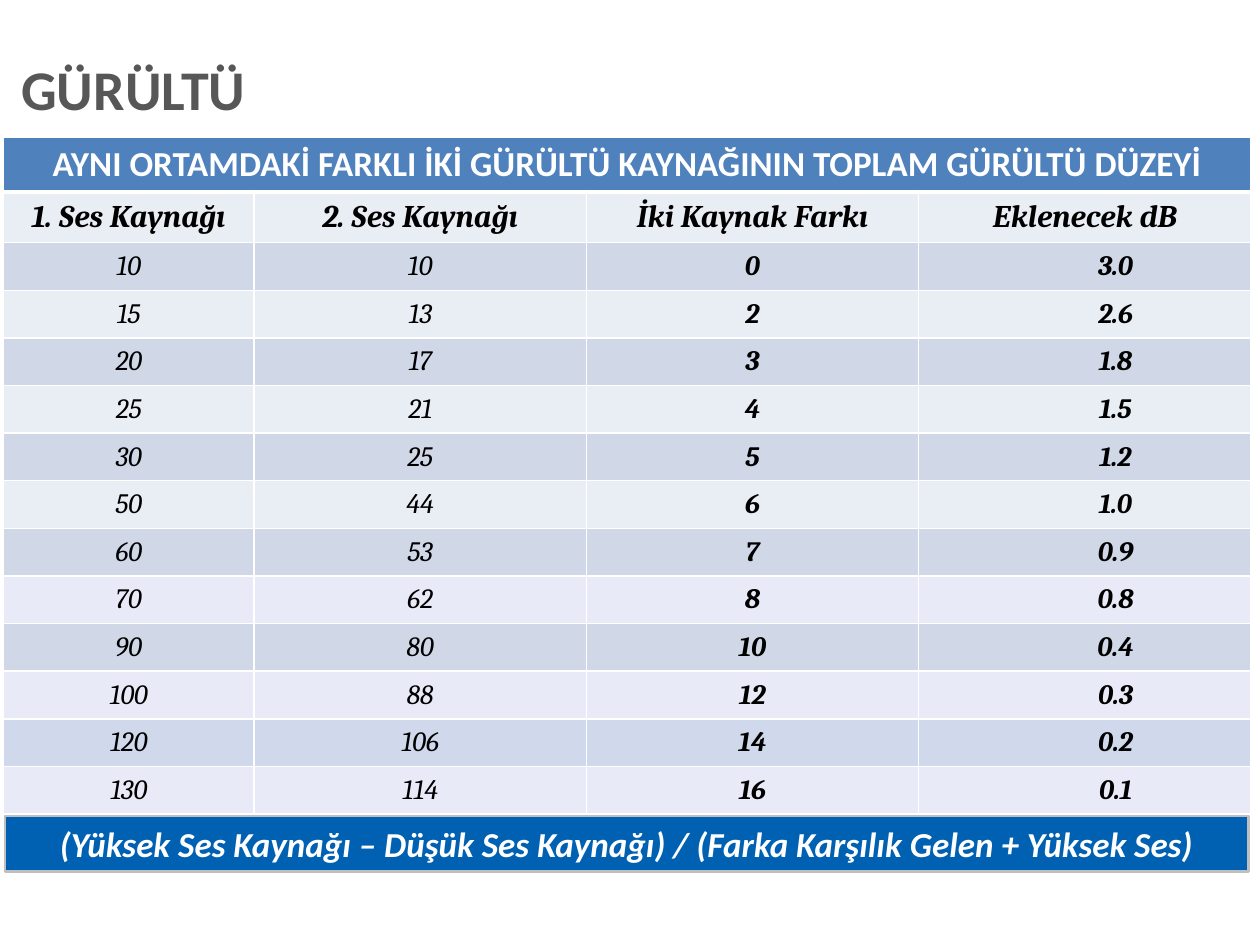
from lxml import etree
from pptx import Presentation
from pptx.dml.color import RGBColor
from pptx.enum.shapes import MSO_SHAPE
from pptx.enum.text import MSO_ANCHOR, PP_ALIGN
from pptx.oxml.ns import qn
from pptx.util import Cm, Pt

RECTANGLE = MSO_SHAPE.RECTANGLE
MIDDLE = MSO_ANCHOR.MIDDLE
LEFT, CENTER = PP_ALIGN.LEFT, PP_ALIGN.CENTER

COLORS = {
    "grey": "575757",
    "white": "FFFFFF",
    "black": "000000",
    "heading": "4F81BD",
    "dark_band": "D0D8E8",
    "blue_band": "D0D8EC",
    "light_band": "E9EDF4",
    "lilac_band": "E9EAF7",
    "formula": "0061B2",
    "formula_line": "BFBFBF",
}

HEADING = "AYNI ORTAMDAKİ FARKLI İKİ GÜRÜLTÜ KAYNAĞININ TOPLAM GÜRÜLTÜ DÜZEYİ"
COLUMN_NAMES = ["1. Ses Kaynağı", "2. Ses Kaynağı", "İki Kaynak Farkı", "Eklenecek dB"]
NOISE_LEVELS = [
    (10, 10, 0, 3.0),
    (15, 13, 2, 2.6),
    (20, 17, 3, 1.8),
    (25, 21, 4, 1.5),
    (30, 25, 5, 1.2),
    (50, 44, 6, 1.0),
    (60, 53, 7, 0.9),
    (70, 62, 8, 0.8),
    (90, 80, 10, 0.4),
    (100, 88, 12, 0.3),
    (120, 106, 14, 0.2),
    (130, 114, 16, 0.1),
]
LEVEL_BANDS = ["dark_band", "light_band"] * 3 + ["dark_band", "lilac_band"] * 2 + ["blue_band", "lilac_band"]
COLUMN_WIDTHS = [5.05, 6.7, 6.7, 6.7]
ROW_HEIGHTS = [1.09, 0.99] + [0.96] * len(NOISE_LEVELS)


def rgb(name):
    return RGBColor.from_string(COLORS[name])


class SlideBuilder:
    body_font = "Calibri"
    table_font = "Cambria"

    def __init__(self, slide):
        self.slide = slide

    def style(self, paragraph, size, color, align, font=body_font, bold=True, italic=False):
        paragraph.alignment = align
        paragraph.font.size = Pt(size)
        paragraph.font.name = font
        paragraph.font.bold = bold
        paragraph.font.italic = italic
        paragraph.font.color.rgb = rgb(color)

    def title(self, place, wording, size, color):
        frame = self.slide.shapes.add_textbox(*map(Cm, place)).text_frame
        frame.word_wrap = True
        frame.vertical_anchor = MIDDLE
        frame.margin_left = frame.margin_right = 0
        frame.margin_top = frame.margin_bottom = Cm(0.13)
        paragraph = frame.paragraphs[0]
        paragraph.text = wording
        paragraph.line_spacing = 0.9
        self.style(paragraph, size, color, LEFT)

    def banner(self, place, wording, size, fill, line):
        banner = self.slide.shapes.add_shape(RECTANGLE, *map(Cm, place))
        banner.shadow.inherit = False
        banner.fill.solid()
        banner.fill.fore_color.rgb = rgb(fill)
        banner.line.color.rgb = rgb(line)
        banner.line.width = Pt(1.25)
        banner.text_frame.word_wrap = True
        banner.text_frame.vertical_anchor = MIDDLE
        paragraph = banner.text_frame.paragraphs[0]
        paragraph.text = wording
        self.style(paragraph, size, "white", CENTER, italic=True)

    def table(self, left, top, widths, heights):
        table = self.slide.shapes.add_table(
            len(heights), len(widths), Cm(left), Cm(top), Cm(sum(widths)), Cm(sum(heights))
        ).table
        table.first_row = table.horz_banding = False
        for column, width in zip(table.columns, widths):
            column.width = Cm(width)
        for row, height in zip(table.rows, heights):
            row.height = Cm(height)
        return table

    def borders(self, cell, top=1, bottom=1):
        properties = cell._tc.get_or_add_tcPr()
        for side, width in (("lnL", 1), ("lnR", 1), ("lnT", top), ("lnB", bottom)):
            line = etree.SubElement(properties, qn(f"a:{side}"), w=str(Pt(width)))
            fill = etree.SubElement(line, qn("a:solidFill"))
            etree.SubElement(fill, qn("a:srgbClr"), val=COLORS["white"])

    def cell(self, cell, wording, fill, size, color="black", margins=(0.25, 0.13), indent=0, **font):
        cell.fill.solid()
        cell.fill.fore_color.rgb = rgb(fill)
        cell.vertical_anchor = MIDDLE
        cell.margin_left = cell.margin_right = Cm(margins[0])
        cell.margin_top = cell.margin_bottom = Cm(margins[1])
        paragraph = cell.text_frame.paragraphs[0]
        paragraph.text = wording
        if indent:
            paragraph._p.get_or_add_pPr().set("indent", str(Cm(indent)))
        self.style(paragraph, size, color, CENTER, **font)

    def noise_table(self):
        table = self.table(0.07, 2.76, COLUMN_WIDTHS, ROW_HEIGHTS)
        for index, row in enumerate(table.rows):
            for cell in row.cells:
                self.borders(cell, top=3 if index == 1 else 1, bottom=3 if index == 0 else 1)
        table.cell(0, 0).merge(table.cell(0, len(COLUMN_WIDTHS) - 1))
        self.cell(table.cell(0, 0), HEADING, "heading", 20, "white")
        for column, name in enumerate(COLUMN_NAMES):
            self.cell(table.cell(1, column), name, "light_band", 18, font=self.table_font, italic=True)
        for row, (levels, band) in enumerate(zip(NOISE_LEVELS, LEVEL_BANDS), start=2):
            for column, level in enumerate(levels):
                is_result = column >= 2
                self.cell(
                    table.cell(row, column), str(level), band, 16,
                    margins=(0.18, 0) if is_result else (0.25, 0.13),
                    indent=1.24 if column == 3 else 0,
                    font=self.table_font, bold=is_result, italic=True,
                )


def main():
    presentation = Presentation()
    presentation.slide_width, presentation.slide_height = Cm(25.4), Cm(19.05)
    builder = SlideBuilder(presentation.slides.add_slide(presentation.slide_layouts[6]))
    builder.title((0.43, 0.97, 24.49, 1.8), "GÜRÜLTÜ", 32, "grey")
    builder.noise_table()
    builder.banner((0.1, 16.45, 25.07, 1.12),
                   "(Yüksek Ses Kaynağı – Düşük Ses Kaynağı) / (Farka Karşılık Gelen + Yüksek Ses)",
                   20, "formula", "formula_line")
    presentation.save("out.pptx")


if __name__ == "__main__":
    main()
